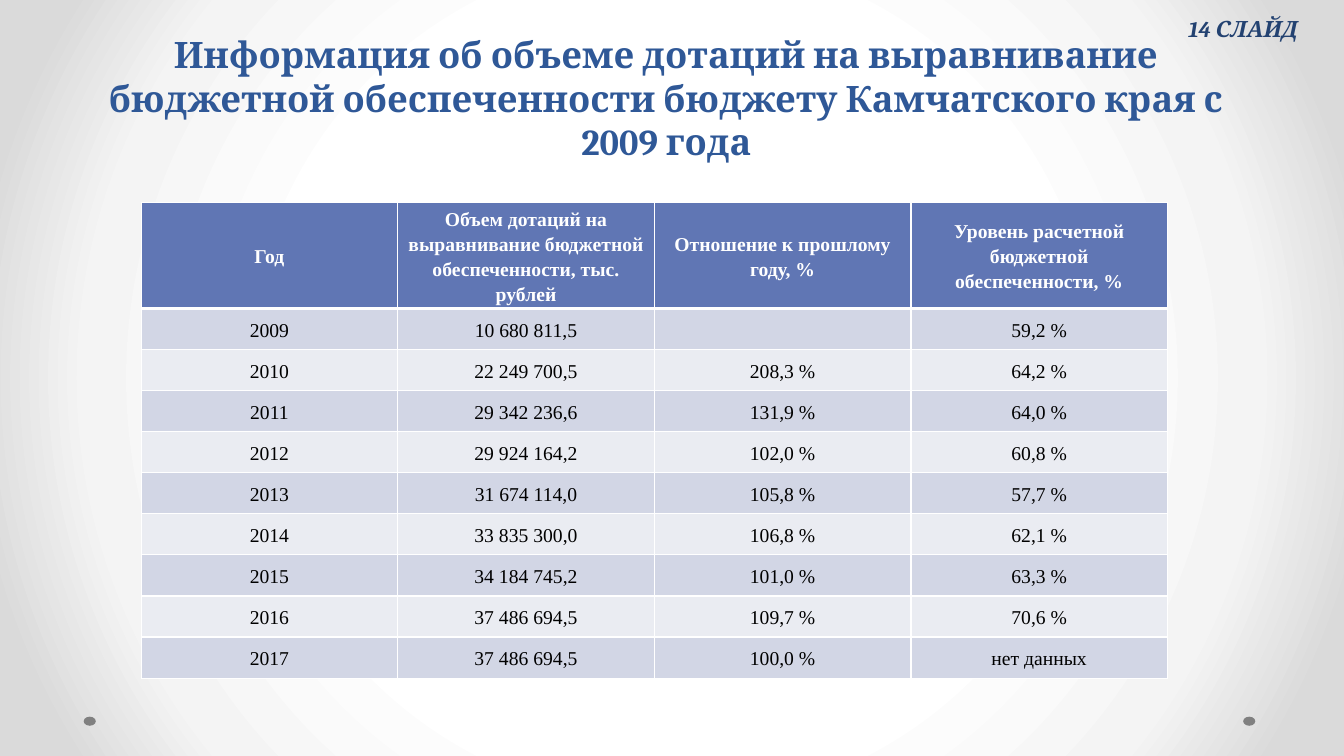
from dataclasses import dataclass

import pptx
import pptx.dml.color
import pptx.enum.shapes
import pptx.enum.text
import pptx.oxml
import pptx.oxml.ns
import pptx.util

Inches = pptx.util.Inches
PP_ALIGN = pptx.enum.text.PP_ALIGN
ANCHOR = pptx.enum.text.MSO_ANCHOR


@dataclass(frozen=True)
class Theme:
    heading_font: str = "Cambria"
    table_font: str = "Times New Roman"
    title_size: int = 26
    label_size: int = 16
    table_size: int = 14
    title: str = "2F5897"
    label: str = "234271"
    header: str = "6076B4"
    bands: tuple = ("D2D6E5", "EAECF2")
    white: str = "FFFFFF"
    black: str = "000000"
    dot: str = "808080"
    backdrop: tuple = ((50, "FFFFFF"), (76, "F4F4F4"), (92, "DADADA"))


THEME = Theme()
TITLE = ("Информация об объеме дотаций на выравнивание бюджетной "
         "обеспеченности бюджету Камчатского края с 2009 года")
HEADINGS = (
    "Год",
    "Объем дотаций на выравнивание бюджетной обеспеченности, тыс. рублей",
    "Отношение к прошлому году, %",
    "Уровень расчетной бюджетной обеспеченности, %",
)
GRANTS = (
    ("2009", "10 680 811,5", "", "59,2 %"),
    ("2010", "22 249 700,5", "208,3 %", "64,2 %"),
    ("2011", "29 342 236,6", "131,9 %", "64,0 %"),
    ("2012", "29 924 164,2", "102,0 %", "60,8 %"),
    ("2013", "31 674 114,0", "105,8 %", "57,7 %"),
    ("2014", "33 835 300,0", "106,8 %", "62,1 %"),
    ("2015", "34 184 745,2", "101,0 %", "63,3 %"),
    ("2016", "37 486 694,5", "109,7 %", "70,6 %"),
    ("2017", "37 486 694,5", "100,0 %", "нет данных"),
)


def rgb(color):
    return pptx.dml.color.RGBColor.from_string(color)


def add_run(paragraph, text, font, size, color, bold=False, italic=False):
    run = paragraph.add_run()
    run.text = text
    run.font.name = font
    run.font.size = pptx.util.Pt(size)
    run.font.color.rgb = rgb(color)
    run.font.bold = bold
    run.font.italic = italic


def paint_background(slide):
    """Fill the background with a gradient running out from the centre."""
    slide.background.fill.solid()
    solid = slide.element.find(".//" + pptx.oxml.ns.qn("a:solidFill"))
    stops = "".join(
        f'<a:gs pos="{position * 1000}"><a:srgbClr val="{color}"/></a:gs>'
        for position, color in THEME.backdrop)
    gradient = pptx.oxml.parse_xml(
        f'<a:gradFill {pptx.oxml.ns.nsdecls("a")} rotWithShape="1">'
        f'<a:gsLst>{stops}</a:gsLst><a:path path="circle">'
        '<a:fillToRect l="50000" t="50000" r="50000" b="50000"/>'
        '</a:path></a:gradFill>')
    solid.getparent().replace(solid, gradient)


def add_corner_dots(slide, left, top, width, height):
    """Put one dot at each end of the given strip."""
    dot_width = Inches(0.12)
    for dot_left in (left, left + width - dot_width):
        dot = slide.shapes.add_shape(
            pptx.enum.shapes.MSO_SHAPE.OVAL, dot_left, top, dot_width, height)
        dot.shadow.inherit = False
        dot.fill.solid()
        dot.fill.fore_color.rgb = rgb(THEME.dot)
        dot.line.fill.background()


def place_title(slide, left, top, width, height):
    title = slide.shapes.title
    title.left, title.top, title.width, title.height = left, top, width, height
    frame = title.text_frame
    frame.word_wrap = True
    frame.auto_size = pptx.enum.text.MSO_AUTO_SIZE.NONE
    frame.vertical_anchor = ANCHOR.BOTTOM
    paragraph = frame.paragraphs[0]
    paragraph.alignment = PP_ALIGN.CENTER
    add_run(paragraph, TITLE, THEME.heading_font, THEME.title_size,
            THEME.title, bold=True)


def add_slide_label(slide, left, top, width, height):
    label = slide.shapes.add_textbox(left, top, width, height)
    label.text_frame.word_wrap = True
    add_run(label.text_frame.paragraphs[0], "14 СЛАЙД", THEME.heading_font,
            THEME.label_size, THEME.label, bold=True, italic=True)


def set_borders(cell, widths):
    """Draw white borders; widths maps a side (L, R, T, B) to points."""
    properties = cell._tc.get_or_add_tcPr()
    for index, (side, points) in enumerate(widths.items()):
        properties.insert(index, pptx.oxml.parse_xml(
            f'<a:ln{side} {pptx.oxml.ns.nsdecls("a")} '
            f'w="{pptx.util.Pt(points)}"><a:solidFill>'
            f'<a:srgbClr val="{THEME.white}"/></a:solidFill></a:ln{side}>'))


def fill_cell(cell, text, is_header, fill):
    cell.fill.solid()
    cell.fill.fore_color.rgb = rgb(fill)
    cell.vertical_anchor = ANCHOR.MIDDLE
    cell.margin_left = cell.margin_right = Inches(0.07)
    cell.margin_top = cell.margin_bottom = 0
    if is_header:
        set_borders(cell, {"L": 1, "R": 1, "T": 1, "B": 3})
    else:
        set_borders(cell, {"L": 1, "R": 1, "B": 1})
    if text:
        paragraph = cell.text_frame.paragraphs[0]
        paragraph.alignment = PP_ALIGN.CENTER
        paragraph.line_spacing = 1.15
        add_run(paragraph, text, THEME.table_font, THEME.table_size,
                THEME.white if is_header else THEME.black, bold=is_header)


def add_grants_table(slide, left, top, width, height):
    rows = (HEADINGS,) + GRANTS
    table = slide.shapes.add_table(
        len(rows), len(HEADINGS), left, top, width, height).table
    for column in table.columns:
        column.width = width // len(HEADINGS)
    header_height = Inches(1.05)
    for index, values in enumerate(rows):
        is_header = index == 0
        table.rows[index].height = (
            header_height if is_header
            else (height - header_height) // len(GRANTS))
        fill = THEME.header if is_header else THEME.bands[(index - 1) % 2]
        for column, text in enumerate(values):
            fill_cell(table.cell(index, column), text, is_header, fill)


def main():
    deck = pptx.Presentation()
    deck.slide_width, deck.slide_height = Inches(13.33), Inches(7.5)
    slide = deck.slides.add_slide(deck.slide_layouts.get_by_name("Title Only"))
    paint_background(slide)
    add_corner_dots(slide, Inches(0.83), Inches(7.11), Inches(11.62), Inches(0.09))
    place_title(slide, Inches(0.61), Inches(0.71), Inches(12), Inches(0.96))
    add_grants_table(slide, Inches(1.4), Inches(2.01), Inches(10.18), Inches(4.72))
    add_slide_label(slide, Inches(11.69), Inches(0.1), Inches(1.39), Inches(0.37))
    deck.save("out.pptx")


if __name__ == "__main__":
    main()
